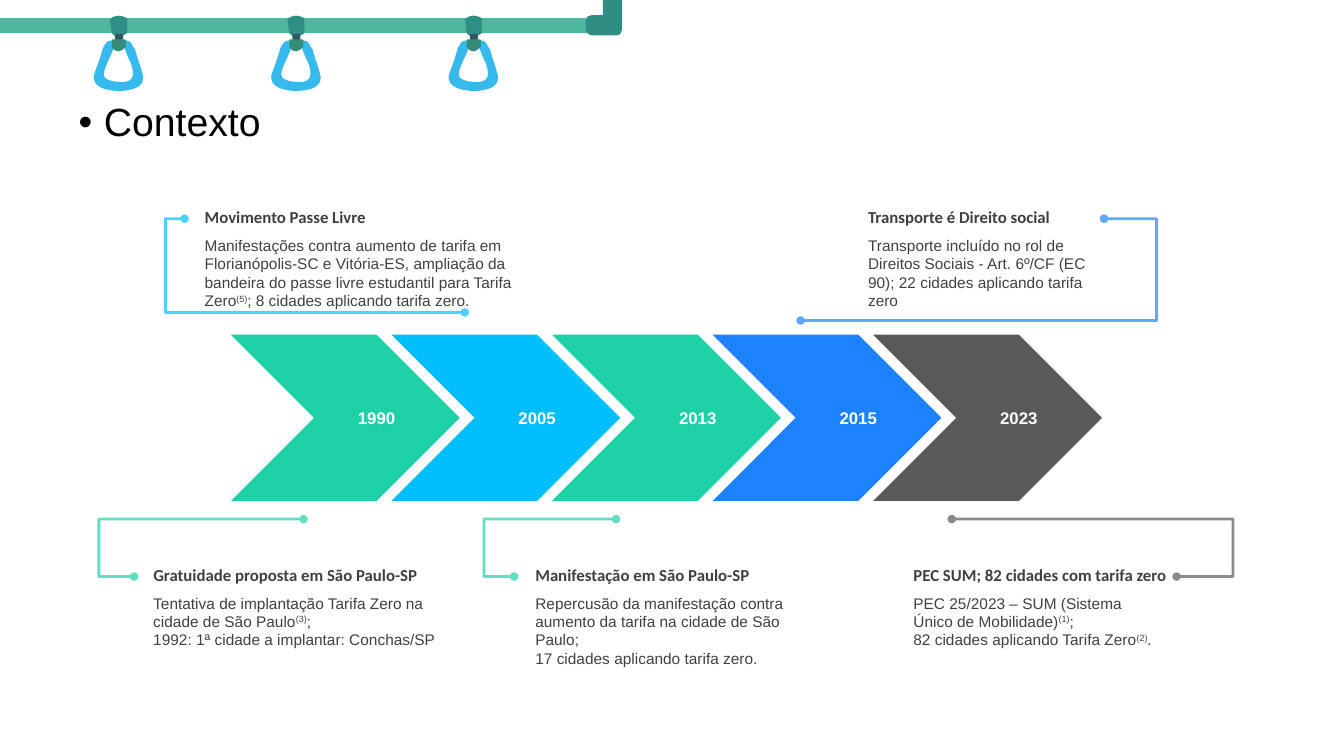
from dataclasses import dataclass

from lxml.etree import SubElement
from pptx import Presentation
from pptx.dml.color import RGBColor
from pptx.enum.shapes import MSO_CONNECTOR as Connector, MSO_SHAPE as Shape
from pptx.enum.text import MSO_AUTO_SIZE as AutoSize, MSO_VERTICAL_ANCHOR as Anchor, PP_ALIGN as Align
from pptx.oxml.ns import qn
from pptx.util import Inches, Pt


@dataclass(frozen=True)
class Theme:
    rail: str = "4EB89C"
    corner: str = "2F8D83"
    sleeve: str = "2E8F87"
    pin: str = "335764"
    handle: str = "36B9EC"
    knot: str = "348C79"
    green: str = "1ED0A6"
    cyan: str = "00BDFB"
    blue: str = "1C82FF"
    gray: str = "595959"
    text: str = "404040"
    black: str = "000000"
    white: str = "FFFFFF"
    body_font: str = "Arial"
    heading_font: str = "Calibri"
    title_size: int = 28
    heading_size: int = 12
    body_size: int = 11


theme = Theme()

deck = Presentation()
deck.slide_width, deck.slide_height = Inches(13.33), Inches(7.5)
slide = deck.slides.add_slide(deck.slide_layouts[1])


def draw_outline(start, segments, color, dx=0):
    """Fill a closed outline; a segment is a line end (x, y) or a cubic curve of six numbers."""
    points = [start] + [segment[i:i + 2] for segment in segments for i in range(0, len(segment), 2)]
    places = [(Inches(x + dx), Inches(y)) for x, y in points]
    builder = slide.shapes.build_freeform(*places[0], scale=1.0)
    builder.add_line_segments(places[1:], close=True)
    outline = builder.convert_to_shape()
    steps = iter(outline.element.findall(".//" + qn("a:lnTo")))
    for segment in segments:
        step = next(steps)
        if len(segment) == 6:
            step.tag = qn("a:cubicBezTo")
            for _ in range(2):
                following = next(steps)
                step.append(following[0])
                following.getparent().remove(following)
    outline.fill.solid()
    outline.fill.fore_color.rgb = RGBColor.from_string(color)
    outline.line.fill.background()
    outline.shadow.inherit = False


def add_text(box, text, font, size, color, bold=False, align=Align.LEFT):
    """Add a text box; parts between bars are superscript."""
    frame = slide.shapes.add_textbox(*map(Inches, box)).text_frame
    frame.word_wrap = True
    frame.auto_size = AutoSize.SHAPE_TO_FIT_TEXT
    frame.margin_left = frame.margin_right = 0
    frame.text = text
    for paragraph in frame.paragraphs:
        parts = paragraph.text.split("|")
        paragraph.clear()
        paragraph.alignment = align
        for index, part in enumerate(parts):
            run = paragraph.add_run()
            run.text = part
            run.font.name, run.font.size, run.font.bold = font, Pt(size), bold
            run.font.color.rgb = RGBColor.from_string(color)
            if index % 2:
                run.font._element.set("baseline", "30000")


# Handrail with hanging straps
rail = slide.shapes.add_shape(Shape.RECTANGLE, 0, Inches(0.18), Inches(5.86), Inches(0.15))
rail.fill.solid()
rail.fill.fore_color.rgb = RGBColor.from_string(theme.rail)
rail.line.fill.background()
rail.shadow.inherit = False

strap_parts = [
    (theme.sleeve, (1.11, 0.33), [
        (1.1, 0.28, 1.1, 0.24, 1.09, 0.19), (1.15, 0.14, 1.2, 0.15, 1.26, 0.18),
        (1.26, 0.22, 1.26, 0.26, 1.26, 0.3), (1.27, 0.33, 1.25, 0.34, 1.22, 0.35),
        (1.2, 0.36, 1.17, 0.36, 1.15, 0.36), (1.13, 0.35, 1.12, 0.34, 1.11, 0.33)]),
    (theme.pin, (1.14, 0.39), [
        (1.14, 0.37, 1.14, 0.35, 1.14, 0.34), (1.17, 0.34, 1.19, 0.34, 1.22, 0.34),
        (1.22, 0.35, 1.22, 0.37, 1.22, 0.39), (1.19, 0.41, 1.17, 0.41, 1.14, 0.39)]),
    (theme.handle, (1.25, 0.4), [
        (1.31, 0.4, 1.31, 0.46, 1.34, 0.49), (1.36, 0.57, 1.39, 0.64, 1.41, 0.72),
        (1.44, 0.8, 1.41, 0.85, 1.33, 0.88), (1.23, 0.91, 1.13, 0.91, 1.03, 0.88),
        (0.95, 0.85, 0.91, 0.8, 0.94, 0.72), (0.97, 0.64, 1, 0.56, 1.02, 0.48),
        (1.04, 0.45, 1.05, 0.4, 1.11, 0.4), (1.13, 0.42, 1.13, 0.45, 1.13, 0.47),
        (1.11, 0.54, 1.07, 0.6, 1.05, 0.66), (1.01, 0.76, 1.03, 0.79, 1.14, 0.81),
        (1.14, 0.81, 1.15, 0.81, 1.15, 0.81), (1.31, 0.83, 1.35, 0.78, 1.3, 0.63),
        (1.27, 0.57, 1.25, 0.52, 1.23, 0.46), (1.23, 0.44, 1.24, 0.42, 1.25, 0.4)]),
    (theme.knot, (1.11, 0.47), [
        (1.11, 0.45, 1.11, 0.43, 1.11, 0.4), (1.11, 0.4, 1.11, 0.4, 1.11, 0.39),
        (1.12, 0.39, 1.13, 0.39, 1.14, 0.39), (1.17, 0.39, 1.19, 0.39, 1.22, 0.39),
        (1.23, 0.39, 1.23, 0.39, 1.24, 0.39), (1.24, 0.39, 1.24, 0.4, 1.25, 0.4),
        (1.25, 0.43, 1.25, 0.45, 1.25, 0.46), (1.2, 0.52, 1.16, 0.53, 1.11, 0.47)]),
]
for strap in range(3):
    for color, start, segments in strap_parts:
        draw_outline(start, segments, color, dx=1.76 * strap)

draw_outline((5.98, 0), [
    (5.98, 0.15), (5.87, 0.15), (5.84, 0.15, 5.81, 0.17, 5.81, 0.2),
    (5.81, 0.29), (5.81, 0.32, 5.84, 0.35, 5.87, 0.35), (5.98, 0.35),
    (6.12, 0.35), (6.15, 0.35, 6.17, 0.32, 6.17, 0.29), (6.17, 0.15), (6.17, 0)], theme.corner)

# Topic line
slide.shapes.title.element.getparent().remove(slide.shapes.title.element)
topic = slide.placeholders[1]
topic.left, topic.top, topic.width, topic.height = map(Inches, (0.68, 0.97, 12.65, 0.92))
topic.text_frame.text = "Contexto"
topic.text_frame.auto_size = AutoSize.NONE
topic.text_frame.vertical_anchor = Anchor.TOP
topic_line = topic.text_frame.paragraphs[0]
topic_line.line_spacing, topic_line.space_before = 0.9, Pt(10)
topic_font = topic_line.runs[0].font
topic_font.name, topic_font.size = theme.body_font, Pt(theme.title_size)
topic_font.color.rgb = RGBColor.from_string(theme.black)
bullet_props = topic_line._p.get_or_add_pPr()
bullet_props.set("marL", str(Inches(0.25)))
bullet_props.set("indent", str(Inches(-0.25)))
SubElement(bullet_props, qn("a:buFont"), typeface=theme.body_font)
SubElement(bullet_props, qn("a:buChar"), char="•")

# Each milestone: year, color, heading box, heading, body box, body, and bracket (start, end, bend x)
milestones = [
    ("1990", theme.green, (1.52, 5.55, 2.68, 0.3), "Gratuidade proposta em São Paulo-SP",
     (1.52, 5.84, 2.87, 0.66),
     "Tentativa de implantação Tarifa Zero na cidade de São Paulo|(3)|;\n1992: 1ª cidade a implantar: Conchas/SP",
     (1.33, 5.72), (3.01, 5.15), 0.98),
    ("2005", theme.cyan, (2.03, 2, 2.23, 0.3), "Movimento Passe Livre",
     (2.03, 2.29, 3.19, 0.84),
     "Manifestações contra aumento de tarifa em Florianópolis-SC e Vitória-ES, ampliação da bandeira "
     "do passe livre estudantil para Tarifa Zero|(5)|; 8 cidades aplicando tarifa zero.",
     (1.83, 2.17), (4.61, 3.1), 1.64),
    ("2013", theme.green, (5.31, 5.55, 2.23, 0.3), "Manifestação em São Paulo-SP",
     (5.31, 5.84, 2.87, 0.66),
     "Repercusão da manifestação contra aumento da tarifa na cidade de São Paulo;\n"
     "17 cidades aplicando tarifa zero.",
     (5.1, 5.72), (6.11, 5.15), 4.8),
    ("2015", theme.blue, (8.61, 2, 2.23, 0.3), "Transporte é Direito social",
     (8.61, 2.29, 2.24, 0.84),
     "Transporte incluído no rol de Direitos Sociais - Art. 6º/CF (EC 90); 22 cidades aplicando tarifa zero",
     (7.94, 3.18), (10.95, 2.17), 11.47),
    ("2023", theme.gray, (9.06, 5.55, 2.55, 0.3), "PEC SUM; 82 cidades com tarifa zero",
     (9.06, 5.84, 2.4, 0.66),
     "PEC 25/2023 – SUM (Sistema Único de Mobilidade)|(1)|;\n82 cidades aplicando Tarifa Zero|(2)|.",
     (9.44, 5.15), (11.67, 5.72), 12.23),
]
first_left, last_left = 2.29, 8.66
pitch = (last_left - first_left) / (len(milestones) - 1)

for index, (year, color, heading_box, heading, body_box, body, start, end, bend) in enumerate(milestones):
    left = first_left + index * pitch
    chevron = slide.shapes.add_shape(Shape.CHEVRON, *map(Inches, (left, 3.32, 2.27, 1.65)))
    chevron.fill.solid()
    chevron.fill.fore_color.rgb = RGBColor.from_string(color)
    chevron.line.fill.background()
    chevron.shadow.inherit = False
    add_text((left + 0.97, 4, 0.95, 0.3), year, theme.body_font, theme.heading_size, theme.white, True, Align.CENTER)
    add_text(heading_box, heading, theme.heading_font, theme.heading_size, theme.text, True)
    add_text(body_box, body, theme.body_font, theme.body_size, theme.text)

    bracket = slide.shapes.add_connector(Connector.ELBOW, *map(Inches, (*start, *end)))
    bracket.line.width = Pt(2)
    bracket.line.color.rgb = RGBColor.from_string(color)
    props = bracket.element.spPr
    bend_ratio = round((bend - start[0]) / (end[0] - start[0]) * 100000)
    SubElement(props.find(".//" + qn("a:avLst")), qn("a:gd"), name="adj1", fmla=f"val {bend_ratio}")
    SubElement(props.find(".//" + qn("a:srgbClr")), qn("a:alpha"), val="70000")
    for tip in ("a:headEnd", "a:tailEnd"):
        SubElement(props.find(qn("a:ln")), qn(tip), type="oval")
    SubElement(props, qn("a:effectLst"))

deck.save("out.pptx")
